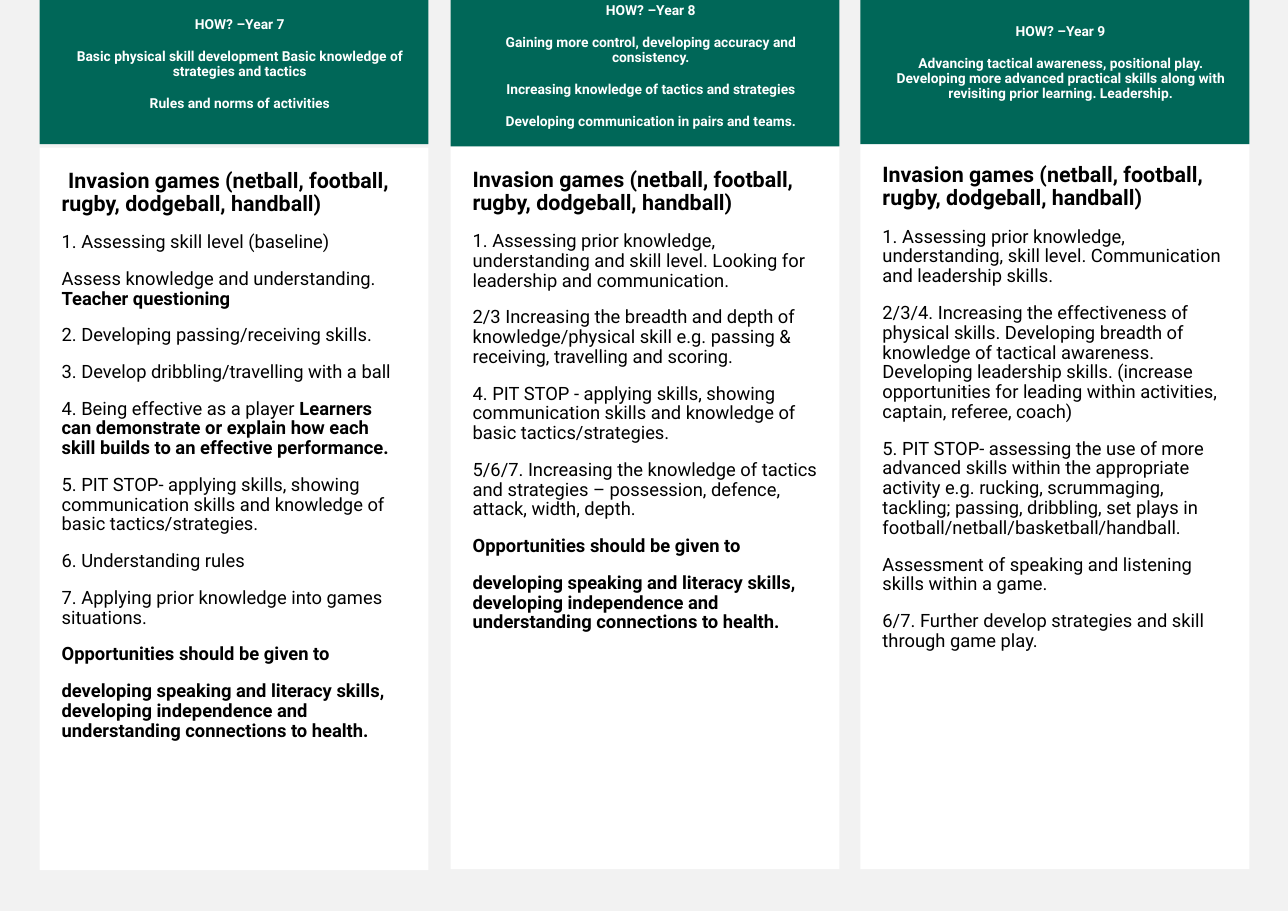
from dataclasses import dataclass

from pptx import Presentation as Deck
from pptx.dml.color import RGBColor as Color
from pptx.enum.shapes import MSO_SHAPE as Form
from pptx.enum.text import MSO_ANCHOR as Anchor, PP_ALIGN as Align
from pptx.shapes.autoshape import Shape
from pptx.slide import Slide
from pptx.text.text import _Paragraph as Para
from pptx.util import Inches, Pt

HEX = {"page": "F2F2F2", "card": "FFFFFF", "head": "006758", "light": "FFFFFF", "dark": "000000"}
FONT = "Roboto"
WIDTH = 3.53
GAMES = "Invasion games (netball, football, rugby, dodgeball, handball)"
CHANCE = "*Opportunities should be given to*"
HEALTH = ("*developing speaking and literacy skills, developing independence "
          "and understanding connections to health.*")


@dataclass
class Year:
    """One year column; text between asterisks is bold."""
    left: float
    depth: float
    base: float
    top: float
    tall: float
    head: list[str]
    steps: list[str]
    lead: str = ""


YEARS = [
    Year(0.36, 1.31, 0.19, 1.34, 6.56, [
        "HOW? –Year 7",
        "Basic physical skill development Basic knowledge of strategies and tactics",
        "Rules and norms of activities",
    ], [
        "1. Assessing skill level (baseline)",
        "Assess knowledge and understanding. *Teacher questioning*",
        "2. Developing passing/receiving skills.",
        "3. Develop dribbling/travelling with a ball",
        "4. Being effective as a player *Learners can demonstrate or explain how each skill "
        "builds to an effective performance.*",
        "5. PIT STOP- applying skills, showing communication skills and knowledge of basic "
        "tactics/strategies.",
        "6. Understanding rules",
        "7. Applying prior knowledge into games situations.",
        CHANCE,
        HEALTH,
    ], " "),
    Year(4.09, 1.33, 0.17, 1.33, 6.56, [
        "HOW? –Year 8",
        "Gaining more control, developing accuracy and consistency.",
        "Increasing knowledge of tactics and strategies",
        "Developing communication in pairs and teams.",
    ], [
        "1. Assessing prior knowledge, understanding and skill level. Looking for leadership "
        "and communication.",
        "2/3 Increasing the breadth and depth of knowledge/physical skill e.g. passing & "
        "receiving, travelling and scoring.",
        "4. PIT STOP - applying skills, showing communication skills and knowledge of basic "
        "tactics/strategies.",
        "5/6/7. Increasing the knowledge of tactics and strategies – possession, defence, "
        "attack, width, depth.",
        CHANCE,
        HEALTH,
    ]),
    Year(7.81, 1.31, 0.21, 1.29, 6.6, [
        "HOW? –Year 9",
        "Advancing tactical awareness, positional play. Developing more advanced practical "
        "skills along with revisiting prior learning. Leadership.",
    ], [
        "1. Assessing prior knowledge, understanding, skill level. Communication and "
        "leadership skills.",
        "2/3/4. Increasing the effectiveness of physical skills. Developing breadth of "
        "knowledge of tactical awareness. Developing leadership skills. (increase "
        "opportunities for leading within activities, captain, referee, coach)",
        "5. PIT STOP- assessing the use of more advanced skills within the appropriate "
        "activity e.g. rucking, scrummaging, tackling; passing, dribbling, set plays in "
        "football/netball/basketball/handball.",
        "Assessment of speaking and listening skills within a game.",
        "6/7. Further develop strategies and skill through game play.",
    ]),
]


def paint(name: str) -> Color:
    """Look up a colour."""
    return Color.from_string(HEX[name])


def add_box(slide: Slide, place: tuple[float, ...], fill: str, pads: tuple[float, ...]) -> Shape:
    """Add a plain filled box with left, top, right and bottom insets."""
    box = slide.shapes.add_shape(Form.RECTANGLE, *map(Inches, place))
    box.shadow.inherit = False
    box.fill.solid()
    box.fill.fore_color.rgb = paint(fill)
    box.line.fill.background()
    frame = box.text_frame
    frame.word_wrap = True
    frame.margin_left, frame.margin_top, frame.margin_right, frame.margin_bottom = map(Inches, pads)
    return box


def add_run(para: Para, text: str, size: int, tone: str, bold: bool, font: str = FONT) -> None:
    """Add one formatted run."""
    run = para.add_run()
    run.text = text
    run.font.name, run.font.size, run.font.bold = font, Pt(size), bold
    run.font.color.rgb = paint(tone)


def add_paras(box: Shape, count: int, align: Align) -> list[Para]:
    """Prepare evenly spaced paragraphs in a box."""
    frame = box.text_frame
    paras = [frame.paragraphs[0]] + [frame.add_paragraph() for _ in range(count - 1)]
    for para in paras:
        para.alignment, para.line_spacing, para.space_before = align, 0.9, Pt(11)
    return paras


def draw_body(slide: Slide, year: Year) -> None:
    """Draw the white card with its title and steps."""
    box = add_box(slide, (year.left, year.top, WIDTH, year.tall), "card", (0.2,) * 4)
    box.text_frame.vertical_anchor = Anchor.TOP
    title, *rest = add_paras(box, len(year.steps) + 1, Align.LEFT)
    if year.lead:
        add_run(title, year.lead, 12, "dark", True, "Comic Neue")
    add_run(title, GAMES, 14, "dark", True)
    for para, step in zip(rest, year.steps):
        for spot, part in enumerate(step.split("*")):
            if part:
                add_run(para, part, 12, "dark", spot % 2 == 1)


def draw_head(slide: Slide, year: Year) -> None:
    """Draw the green header."""
    box = add_box(slide, (year.left, 0, WIDTH, year.depth), "head", (0.2, 0.05, 0.1, year.base))
    box.text_frame.vertical_anchor = Anchor.MIDDLE
    paras = add_paras(box, len(year.head), Align.CENTER)
    paras[0].space_before = Pt(0)
    for para, text in zip(paras, year.head):
        add_run(para, text, 9, "light", True)


def main() -> None:
    """Build and save the slide."""
    deck = Deck()
    deck.slide_width, deck.slide_height = Inches(11.69), Inches(8.27)
    slide = deck.slides.add_slide(deck.slide_layouts[6])
    slide.background.fill.solid()
    slide.background.fill.fore_color.rgb = paint("page")
    for year in YEARS:
        draw_body(slide, year)
        draw_head(slide, year)
    deck.save("out.pptx")


if __name__ == "__main__":
    main()
